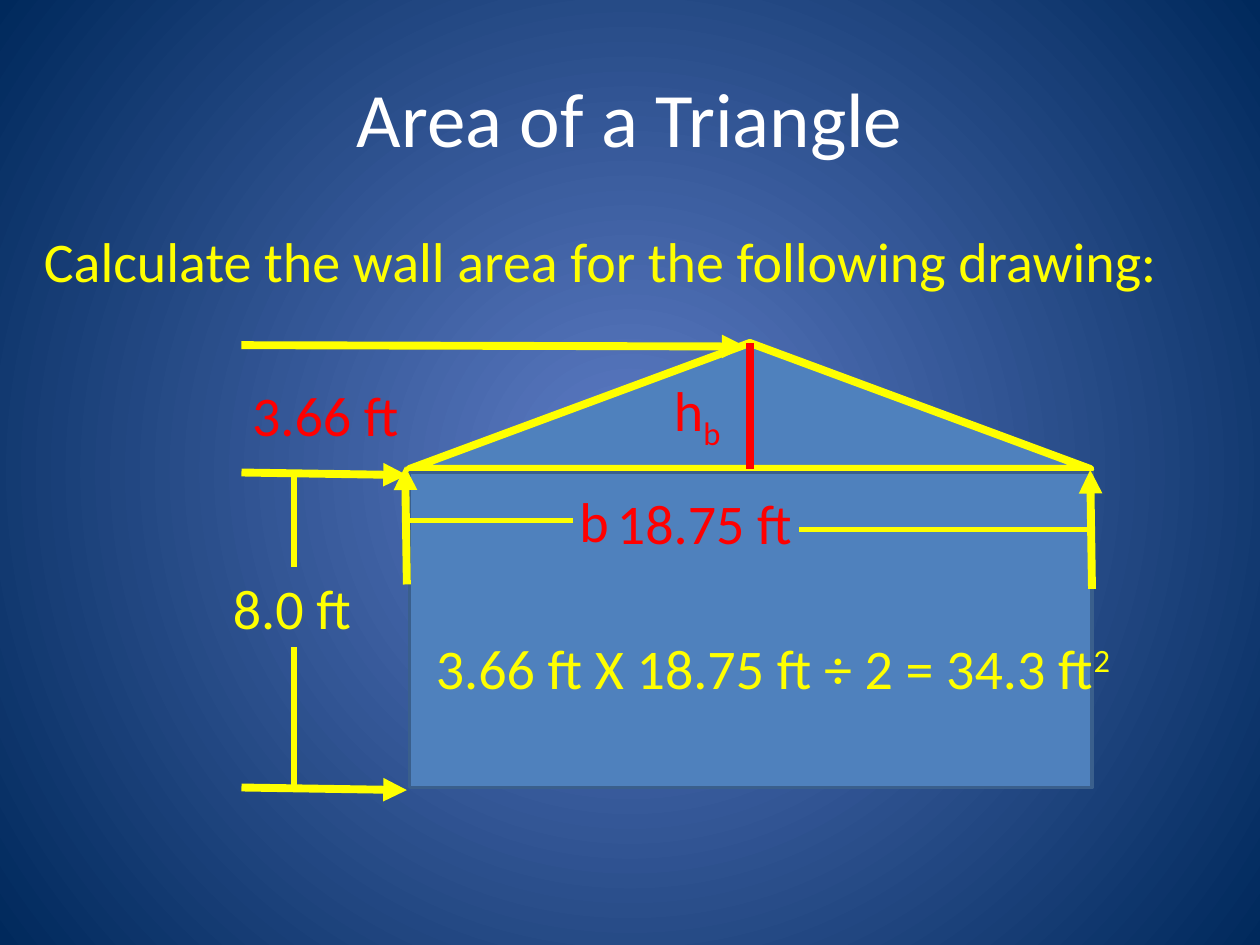
from lxml import etree
from pptx import Presentation
from pptx.dml.color import RGBColor
from pptx.enum.shapes import MSO_CONNECTOR, MSO_SHAPE
from pptx.enum.text import MSO_ANCHOR, PP_ALIGN
from pptx.oxml.ns import qn
from pptx.util import Pt

LINE = MSO_CONNECTOR.STRAIGHT
TRI, RECT = MSO_SHAPE.ISOSCELES_TRIANGLE, MSO_SHAPE.RECTANGLE
MID, CENTER = MSO_ANCHOR.MIDDLE, PP_ALIGN.CENTER

WHITE = RGBColor(0xFF, 0xFF, 0xFF)
YELLOW = RGBColor(0xFF, 0xFF, 0x00)
RED = RGBColor(0xFF, 0x00, 0x00)
BLUE = RGBColor(0x4F, 0x81, 0xBD)
EDGE = RGBColor(0x3A, 0x5F, 0x8C)
GLOW = RGBColor(0x5E, 0x7C, 0xC5)
NAVY = RGBColor(0x00, 0x29, 0x5C)

FONT = "Calibri"
TITLE = "Area of a Triangle"
TASK = "Calculate the wall area for the following drawing:"

WALLS = [
    (TRI, (234, 196, 389, 72), YELLOW, 4.5),
    (RECT, (234, 270, 390, 180), EDGE, 2),
]
ARROWS = [
    (138, 270, 232.5, 271.5),
    (138, 450, 232.5, 451.5),
    (232.5, 334, 231.5, 266.5),
    (624, 336.5, 623, 268.5),
    (138, 197.25, 426, 198),
]
RULES = [
    (168, 271.5, 168, 324),
    (168, 370, 168, 450),
    (327.5, 297.5, 232, 297.5),
    (624, 302.5, 456.5, 302.5),
]
HEIGHT = (428.5, 196, 428.5, 268)
LABELS = [
    ((126, 324, 83.5), YELLOW, "8.0 ft", "", 0),
    ((345.5, 275.75, 116.5), RED, "18.75 ft", "", 0),
    ((137, 213.75, 100), RED, "3.66 ft", "", 0),
    ((242, 358.5, 414.5), YELLOW, "3.66 ft X 18.75 ft ÷ 2 = 34.3 ft", "2", 30),
    ((378, 211, 43), RED, "h", "b", -25),
    ((324, 274.5, 31.5), RED, "b", "", 0),
]


def put(obj, vals):
    for key, val in vals.items():
        setattr(obj, key, val)


def write(para, text, tint, size=32, base=0):
    run = para.add_run()
    run.text = text
    put(run.font, {"name": FONT, "size": Pt(size)})
    run.font.color.rgb = tint
    if base:
        run._r.get_or_add_rPr().set("baseline", str(base * 1000))


def add_text(slide, box, wrap):
    frame = slide.shapes.add_textbox(*map(Pt, box)).text_frame
    frame.word_wrap = wrap
    return frame.paragraphs[0]


def add_line(slide, ends, tint, width, head=False):
    line = slide.shapes.add_connector(LINE, *map(Pt, ends))
    line.line.color.rgb = tint
    line.line.width = Pt(width)
    if head:
        tail = etree.SubElement(line.line._get_or_add_ln(), qn("a:tailEnd"))
        tail.set("type", "triangle")
    etree.SubElement(line._element.spPr, qn("a:effectLst"))


def add_back(slide):
    fill = slide.background.fill
    fill.gradient()
    for stop, tint, pos in zip(fill.gradient_stops, (GLOW, NAVY), (0, 1)):
        stop.color.rgb = tint
        stop.position = pos
    grad = slide.element.find(".//" + qn("a:gradFill"))
    grad.remove(grad.find(qn("a:lin")))
    ring = etree.SubElement(grad, qn("a:path"), {"path": "circle"})
    sides = dict.fromkeys("ltrb", "50000")
    etree.SubElement(ring, qn("a:fillToRect"), sides)


def main():
    deck = Presentation()
    put(deck, {"slide_width": Pt(720), "slide_height": Pt(540)})
    slide = deck.slides.add_slide(deck.slide_layouts[5])
    add_back(slide)

    title = slide.shapes.title
    put(title, {"left": Pt(36), "top": Pt(21.6),
                "width": Pt(648), "height": Pt(90)})
    title.text_frame.vertical_anchor = MID
    head = title.text_frame.paragraphs[0]
    head.alignment = CENTER
    write(head, TITLE, WHITE, 44)
    write(add_text(slide, (18, 126, 678, 46), True), TASK, YELLOW)

    for kind, box, tint, width in WALLS:
        wall = slide.shapes.add_shape(kind, *map(Pt, box))
        wall.shadow.inherit = False
        wall.fill.solid()
        wall.fill.fore_color.rgb = BLUE
        wall.line.color.rgb = tint
        wall.line.width = Pt(width)

    for ends in ARROWS:
        add_line(slide, ends, YELLOW, 4.5, True)
    for ends in RULES:
        add_line(slide, ends, YELLOW, 3)
    for spot, tint, text, mark, base in LABELS:
        para = add_text(slide, (*spot, 46), False)
        write(para, text, tint)
        if mark:
            write(para, mark, tint, base=base)
    add_line(slide, HEIGHT, RED, 4.5)

    deck.save("out.pptx")


if __name__ == "__main__":
    main()
